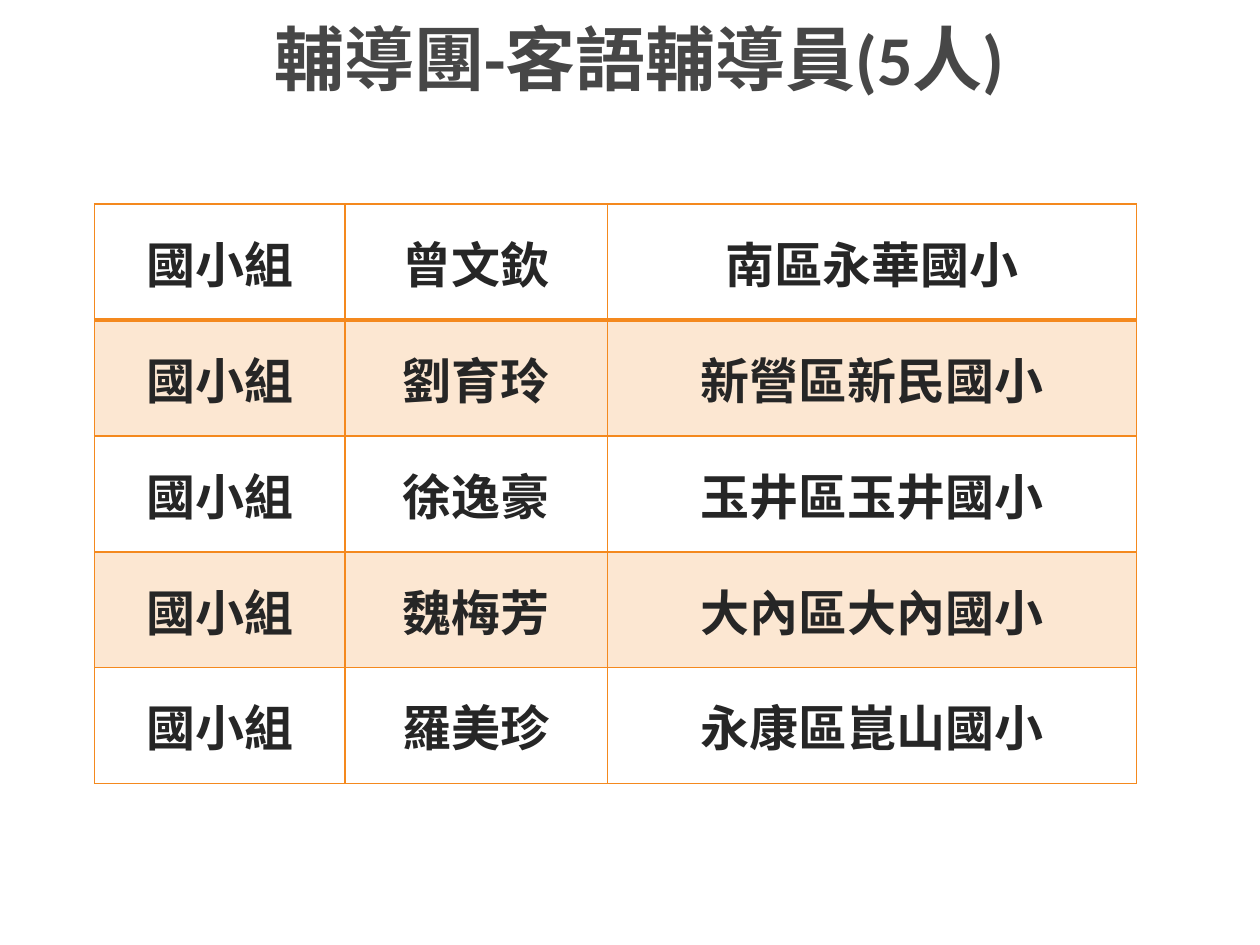
"""Build a slide listing the Hakka language counsellors and their schools."""

from typing import NamedTuple

from lxml.etree import SubElement
from pptx import Presentation
from pptx.dml.color import RGBColor
from pptx.enum.text import MSO_ANCHOR, PP_ALIGN
from pptx.oxml.ns import qn
from pptx.util import Inches, Pt

ORANGE = RGBColor(0xF4, 0x89, 0x1E)
TITLE_GREY = RGBColor(0x47, 0x47, 0x47)
BODY_GREY = RGBColor(0x26, 0x26, 0x26)
LATIN_FONT = "Calibri"
CJK_FONT = "Noto Sans CJK SC"
BAND_OPACITY = 20
COLUMN_WIDTHS = (1.99, 2.08, 4.2)
ROW_HEIGHT = 0.92


class Counsellor(NamedTuple):
    group: str
    name: str
    school: str


COUNSELLORS = (
    Counsellor("國小組", "曾文欽", "南區永華國小"),
    Counsellor("國小組", "劉育玲", "新營區新民國小"),
    Counsellor("國小組", "徐逸豪", "玉井區玉井國小"),
    Counsellor("國小組", "魏梅芳", "大內區大內國小"),
    Counsellor("國小組", "羅美珍", "永康區崑山國小"),
)


def write_centred(frame, text: str, size: float, font_name: str, color: RGBColor) -> None:
    paragraph = frame.paragraphs[0]
    paragraph.alignment = PP_ALIGN.CENTER
    run = paragraph.add_run()
    run.text = text
    font = run.font
    font.size, font.bold, font.name = Pt(size), True, font_name
    font.color.rgb = color
    SubElement(run._r.get_or_add_rPr(), qn("a:ea"), typeface=CJK_FONT)


def add_border(cell, side: str, width: float) -> None:
    line = SubElement(cell._tc.get_or_add_tcPr(), qn(f"a:ln{side}"), w=str(Pt(width)))
    fill = SubElement(line, qn("a:solidFill"))
    SubElement(fill, qn("a:srgbClr"), val=str(ORANGE))


def fill_band(cell) -> None:
    cell.fill.solid()
    cell.fill.fore_color.rgb = ORANGE
    color = cell._tc.tcPr.find(qn("a:solidFill")).find(qn("a:srgbClr"))
    SubElement(color, qn("a:alpha"), val=str(BAND_OPACITY * 1000))


def format_cell(cell, text: str, row: int) -> None:
    cell.vertical_anchor = MSO_ANCHOR.MIDDLE
    cell.margin_left = cell.margin_right = Inches(0.02)
    cell.margin_top = cell.margin_bottom = Inches(0)
    write_centred(cell.text_frame, text, 28, CJK_FONT, BODY_GREY)
    for side in "LRTB":
        below_first = (row, side) in ((0, "B"), (1, "T"))
        add_border(cell, side, 2 if below_first else 1)
    if row % 2:
        fill_band(cell)
    else:
        cell.fill.background()


def add_title(slide, text: str) -> None:
    title = slide.shapes.add_textbox(Inches(0.48), Inches(0.08), Inches(9.19), Inches(0.75))
    frame = title.text_frame
    frame.word_wrap = True
    frame.vertical_anchor = MSO_ANCHOR.MIDDLE
    write_centred(frame, text, 40, LATIN_FONT, TITLE_GREY)


def add_roster(slide, counsellors: tuple[Counsellor, ...]) -> None:
    roster = slide.shapes.add_table(
        len(counsellors), len(COLUMN_WIDTHS), Inches(0.75), Inches(1.62),
        Inches(sum(COLUMN_WIDTHS)), Inches(ROW_HEIGHT * len(counsellors)),
    ).table
    roster.first_row = roster.horz_banding = False
    for column, width in zip(roster.columns, COLUMN_WIDTHS):
        column.width = Inches(width)
    for row, counsellor in enumerate(counsellors):
        roster.rows[row].height = Inches(ROW_HEIGHT)
        for column, text in enumerate(counsellor):
            format_cell(roster.cell(row, column), text, row)


def main() -> None:
    presentation = Presentation()
    presentation.slide_width, presentation.slide_height = Inches(10), Inches(7.5)
    slide = presentation.slides.add_slide(presentation.slide_layouts[6])
    add_title(slide, "輔導團-客語輔導員(5人)")
    add_roster(slide, COUNSELLORS)
    presentation.save("out.pptx")


if __name__ == "__main__":
    main()
